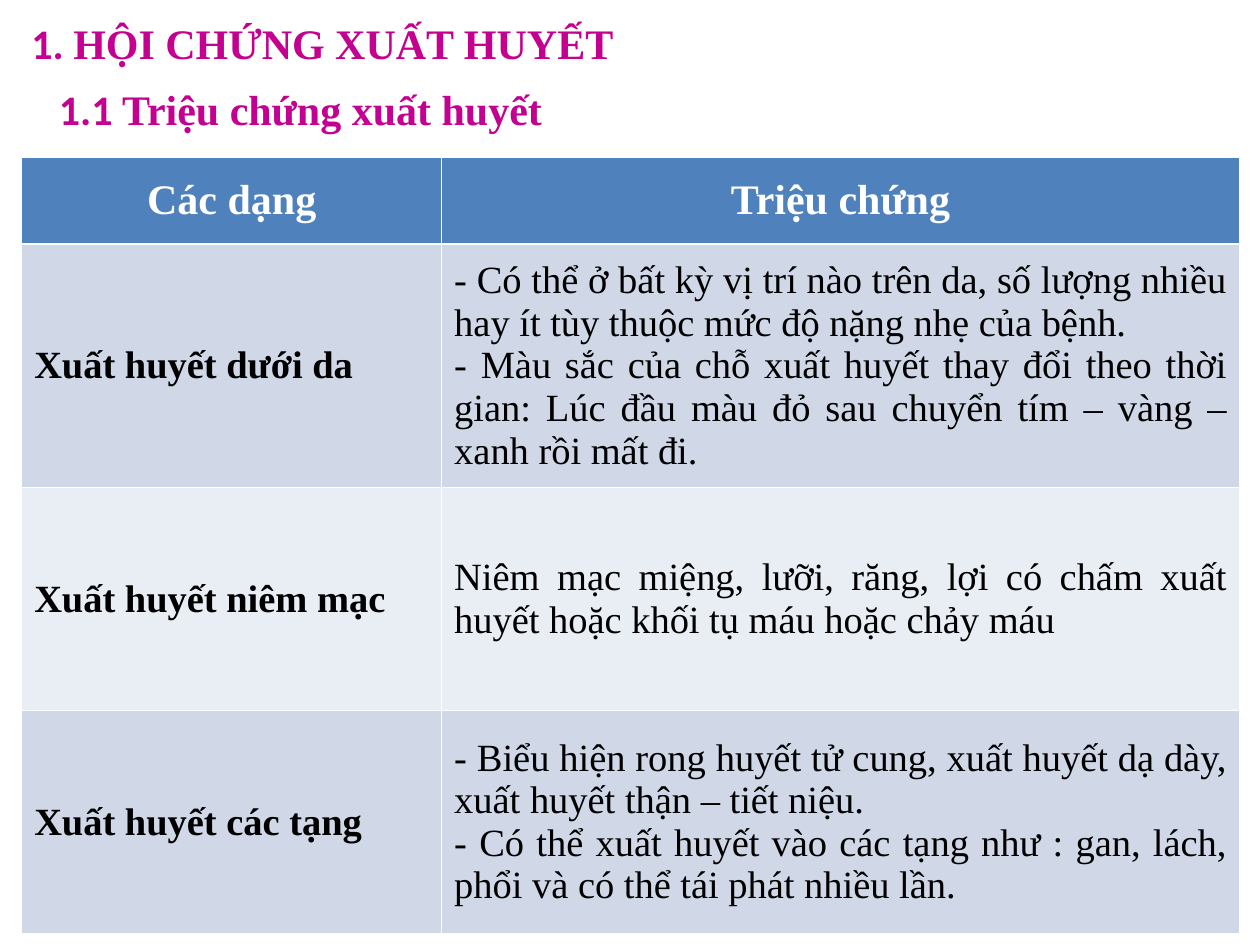
from pptx import Presentation
from pptx.dml.color import RGBColor
from pptx.enum.text import MSO_ANCHOR, PP_ALIGN
from pptx.util import Pt

LEFT, CENTER, JUSTIFY = PP_ALIGN.LEFT, PP_ALIGN.CENTER, PP_ALIGN.JUSTIFY
MIDDLE = MSO_ANCHOR.MIDDLE
SERIF, SANS = "Times New Roman", "Calibri"

COLORS = {
    "heading": "C40091",
    "header": "4F81BD",
    "header_text": "FFFFFF",
    "odd": "D0D8E8",
    "even": "E9EDF4",
    "body_text": "000000",
}

HEADINGS = [
    ("1. ", "HỘI CHỨNG XUẤT HUYẾT", 10.8, 6.5),
    ("1.1 ", "Triệu chứng xuất huyết", 26.6, 44),
]

COLUMN_TITLES = ["Các dạng", "Triệu chứng"]
BLEEDING_FORMS = [
    ("Xuất huyết dưới da", [
        "- Có thể ở bất kỳ vị trí nào trên da, số lượng nhiều hay ít tùy thuộc mức độ nặng nhẹ của bệnh.",
        "- Màu sắc của chỗ xuất huyết thay đổi theo thời gian: Lúc đầu màu đỏ sau chuyển tím – vàng – xanh rồi mất đi.",
    ]),
    ("Xuất huyết niêm mạc", [
        "Niêm mạc miệng, lưỡi, răng, lợi có chấm xuất huyết hoặc khối tụ máu hoặc chảy máu",
    ]),
    ("Xuất huyết các tạng", [
        "- Biểu hiện rong huyết tử cung, xuất huyết dạ dày, xuất huyết thận – tiết niệu.",
        "- Có thể xuất huyết vào các tạng như : gan, lách, phổi và có thể tái phát nhiều lần.",
    ]),
]
COLUMN_WIDTHS = [240, 456]
ROW_HEIGHTS = [49.5, 139.2, 127.4, 127.4]
TABLE_LEFT, TABLE_TOP = 12.4, 90


def style(run, font, size, color, bold):
    run.font.name = font
    run.font.size = Pt(size)
    run.font.bold = bold
    run.font.color.rgb = RGBColor.from_string(COLORS[color])


def add_heading(slide, number, title, left, top):
    frame = slide.shapes.add_textbox(Pt(left), Pt(top), Pt(709), Pt(36.4)).text_frame
    frame.word_wrap = True
    paragraph = frame.paragraphs[0]
    for text, font in ((number, SANS), (title, SERIF)):
        run = paragraph.add_run()
        run.text = text
        style(run, font, 24, "heading", True)


def fill_cell(cell, lines, fill, align, size, color, bold):
    cell.fill.solid()
    cell.fill.fore_color.rgb = RGBColor.from_string(COLORS[fill])
    cell.vertical_anchor = MIDDLE
    cell.text_frame.text = "\n".join(lines)
    for paragraph in cell.text_frame.paragraphs:
        paragraph.alignment = align
        for run in paragraph.runs:
            style(run, SERIF, size, color, bold)


def add_symptom_table(slide):
    table = slide.shapes.add_table(
        len(ROW_HEIGHTS), len(COLUMN_WIDTHS), Pt(TABLE_LEFT), Pt(TABLE_TOP),
        Pt(sum(COLUMN_WIDTHS)), Pt(sum(ROW_HEIGHTS))).table
    for column, width in zip(table.columns, COLUMN_WIDTHS):
        column.width = Pt(width)
    for row, height in zip(table.rows, ROW_HEIGHTS):
        row.height = Pt(height)
    for col, title in enumerate(COLUMN_TITLES):
        fill_cell(table.cell(0, col), [title], "header", CENTER, 24, "header_text", True)
    for row, (form, symptoms) in enumerate(BLEEDING_FORMS, 1):
        band = "odd" if row % 2 else "even"
        fill_cell(table.cell(row, 0), [form], band, LEFT, 22, "body_text", True)
        fill_cell(table.cell(row, 1), symptoms, band, JUSTIFY, 22, "body_text", False)


def main():
    prs = Presentation()
    prs.slide_width, prs.slide_height = Pt(720), Pt(540)
    slide = prs.slides.add_slide(prs.slide_layouts[6])
    for heading in HEADINGS:
        add_heading(slide, *heading)
    add_symptom_table(slide)
    prs.save("out.pptx")


if __name__ == "__main__":
    main()
